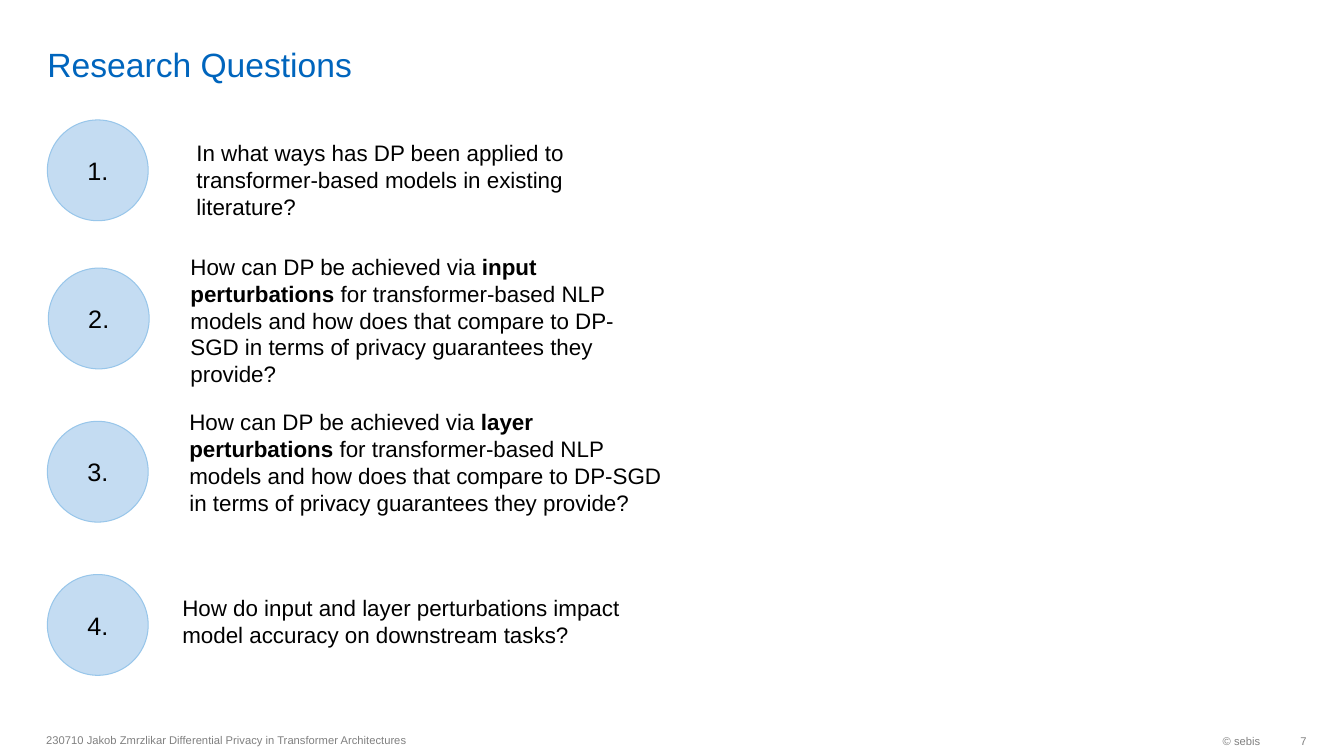
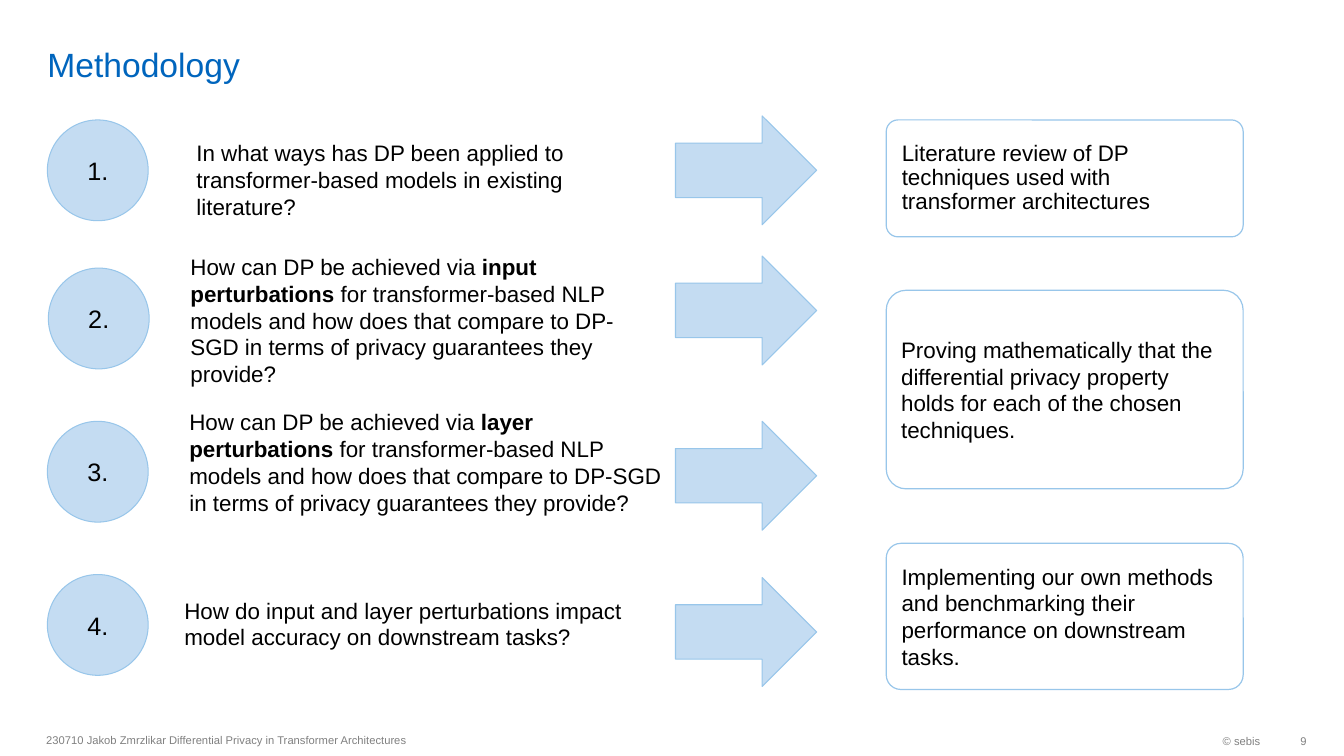
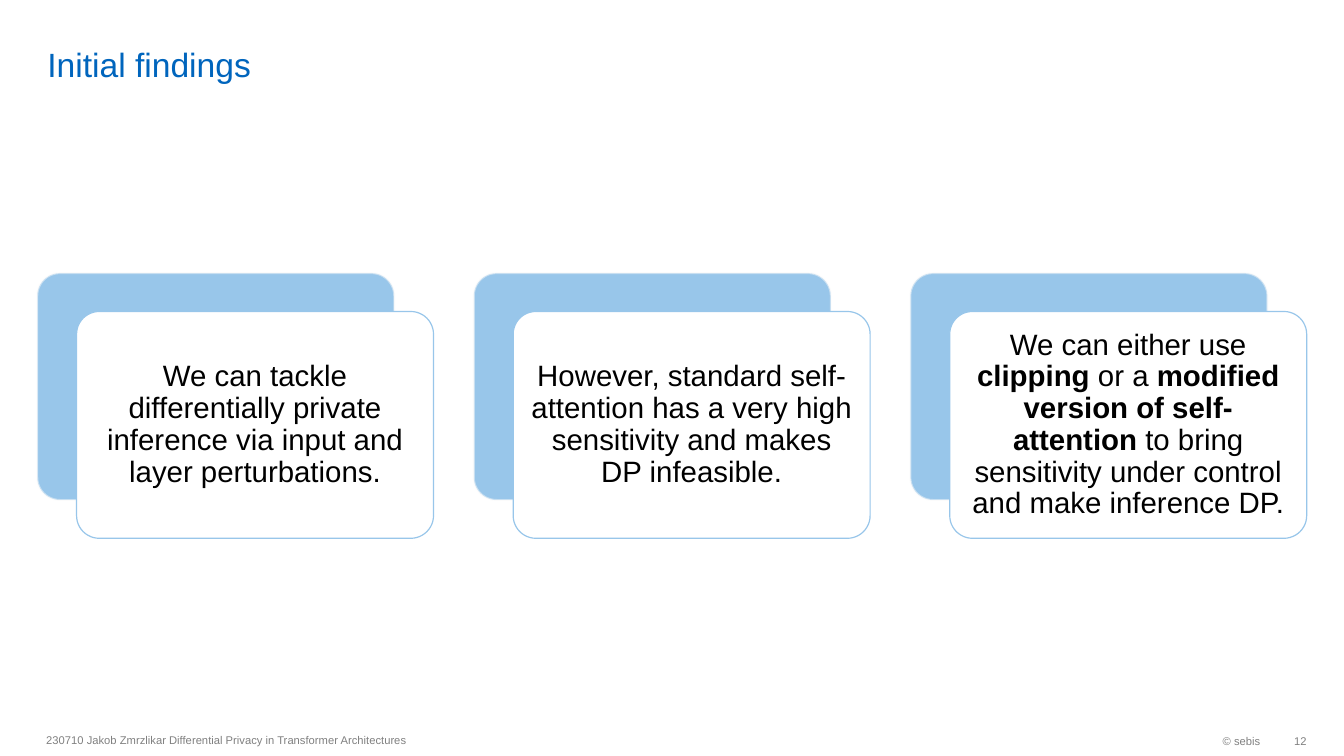
from dataclasses import dataclass, replace

from lxml import etree
from pptx import Presentation
from pptx import util as u
from pptx.dml import color
from pptx.enum import shapes, text
from pptx.oxml import ns

FONT = "Arial"
TITLE_BLUE, PALE_BLUE, SKY_BLUE = "0065BD", "C4DCF2", "98C6EA"
BLACK, WHITE, GREY, OFF_WHITE = "000000", "FFFFFF", "808080", "F9F9F9"
FOOTER = "230710 Jakob Zmrzlikar Differential Privacy in Transformer Architectures"
LEFT, CENTER, RIGHT = text.PP_ALIGN.LEFT, text.PP_ALIGN.CENTER, text.PP_ALIGN.RIGHT
TOP, MIDDLE = text.MSO_ANCHOR.TOP, text.MSO_ANCHOR.MIDDLE
Shape = shapes.MSO_SHAPE
CORNER = 0.1
CORNER_INSET = 0.29 * CORNER  # share of the height a rounded corner takes from the text


@dataclass(frozen=True)
class Box:
    left: float
    top: float
    width: float
    height: float

    def lengths(self) -> tuple:
        return tuple(u.Inches(n) for n in (self.left, self.top, self.width, self.height))


@dataclass(frozen=True)
class TextStyle:
    size: float
    color: str = BLACK
    align: text.PP_ALIGN = LEFT
    anchor: text.MSO_ANCHOR = MIDDLE
    spacing: float = 1.0
    wrap: bool = True


@dataclass(frozen=True)
class Question:
    circle: Box
    box: Box
    wording: str


@dataclass(frozen=True)
class Method:
    box: Box
    wording: str
    spacing: float = 1.0


BODY = TextStyle(16, anchor=TOP)
NUMBER = TextStyle(18, align=CENTER)
FINDING = TextStyle(21, align=CENTER, spacing=0.9)
SMALL = TextStyle(8, GREY)
SMALL_RIGHT = TextStyle(8, GREY, RIGHT, wrap=False)

PERTURBATION = (
    "How can DP be achieved via **{} perturbations** for transformer-based NLP models "
    "and how does that compare to DP-SGD in terms of privacy guarantees they provide?"
)
QUESTIONS = [
    Question(Box(0.47, 1.19, 1, 1), Box(1.85, 1.33, 4.85, 0.94),
             "In what ways has DP been applied to transformer-based models in existing literature?"),
    Question(Box(0.48, 2.66, 1, 1), Box(1.79, 2.46, 4.85, 1.41), PERTURBATION.format("input")),
    Question(Box(0.47, 4.18, 1, 1), Box(1.78, 4, 4.88, 1.45), PERTURBATION.format("layer")),
    Question(Box(0.47, 5.7, 1, 1), Box(1.71, 5.85, 4.99, 0.7),
             "How do input and layer perturbations impact model accuracy on downstream tasks?"),
]
ARROW_TOPS = [1.15, 2.54, 4.18, 5.73]
METHODS = [
    Method(Box(8.79, 1.19, 3.54, 1.16),
           "Literature review of DP techniques used with transformer architectures", 0.9),
    Method(Box(8.79, 2.88, 3.54, 1.97),
           "Proving mathematically that the differential privacy property holds "
           "for each of the chosen techniques."),
    Method(Box(8.79, 5.39, 3.54, 1.45),
           "Implementing our own methods and benchmarking their performance on downstream tasks."),
]
FINDINGS = [
    "We can tackle differentially private inference via input and layer perturbations.",
    "However, standard self-attention has a very high sensitivity and makes DP infeasible.",
    "We can either use **clipping** or a **modified version of self-attention** "
    "to bring sensitivity under control and make inference DP.",
]


def rgb(value: str) -> color.RGBColor:
    return color.RGBColor.from_string(value)


def write(shape, wording: str, style: TextStyle) -> None:
    """Fill a shape with one paragraph; words between ** are bold."""
    frame = shape.text_frame
    frame.word_wrap = style.wrap
    frame.vertical_anchor = style.anchor
    paragraph = frame.paragraphs[0]
    paragraph.alignment = style.align
    paragraph.line_spacing = style.spacing
    paragraph.font.name = FONT
    paragraph.font.size = u.Pt(style.size)
    paragraph.font.color.rgb = rgb(style.color)
    for index, part in enumerate(wording.split("**")):
        run = paragraph.add_run()
        run.text = part
        if index % 2:
            run.font.bold = True


def add_text(slide, box: Box, wording: str, style: TextStyle):
    shape = slide.shapes.add_textbox(*box.lengths())
    write(shape, wording, style)
    return shape


def add_shape(slide, kind: Shape, box: Box, fill: str = PALE_BLUE,
              line: str = SKY_BLUE, weight: float = 0.75):
    shape = slide.shapes.add_shape(kind, *box.lengths())
    shape.shadow.inherit = False
    shape.fill.solid()
    shape.fill.fore_color.rgb = rgb(fill)
    shape.line.color.rgb = rgb(line)
    shape.line.width = u.Pt(weight)
    if kind == Shape.ROUNDED_RECTANGLE:
        shape.adjustments[0] = CORNER
    return shape


def add_card(slide, box: Box, wording: str, style: TextStyle, padding: float) -> None:
    card = add_shape(slide, Shape.ROUNDED_RECTANGLE, box, WHITE, weight=0.85)
    write(card, wording, style)
    frame = card.text_frame
    margin = u.Inches(round(padding - CORNER_INSET * box.height, 2))
    frame.margin_left = frame.margin_right = margin
    frame.margin_top = frame.margin_bottom = margin


def add_slide(presentation, title: str, number: int):
    """Title-only slide with the shared title style and footer."""
    slide = presentation.slides.add_slide(presentation.slide_layouts[5])
    heading = slide.shapes.title
    heading.left, heading.top, heading.width, heading.height = Box(0.37, 0.05, 11.58, 0.79).lengths()
    write(heading, title, TextStyle(24, TITLE_BLUE, anchor=text.MSO_ANCHOR.BOTTOM))
    heading.text_frame.margin_top = heading.text_frame.margin_bottom = 0
    add_text(slide, Box(0.36, 7.18, 6.3, 0.32), FOOTER, SMALL)
    add_text(slide, Box(10.26, 7.19, 2.34, 0.32), "© sebis", SMALL_RIGHT)
    page = add_text(slide, Box(12.6, 7.19, 0.36, 0.32), str(number), SMALL_RIGHT)
    page.text_frame.margin_right = 0
    return slide


def add_questions(slide, questions: list[Question]) -> None:
    for number, question in enumerate(questions, 1):
        circle = add_shape(slide, Shape.OVAL, question.circle)
        write(circle, f"{number}.", NUMBER)
        add_text(slide, question.box, question.wording, BODY)


def build_methodology(slide) -> None:
    *first, last = QUESTIONS
    add_questions(slide, [*first, replace(last, box=Box(1.73, 5.87, 4.99, 0.79))])
    for top in ARROW_TOPS:
        add_shape(slide, Shape.RIGHT_ARROW, Box(6.7, top, 1.4, 1.08))
    for method in METHODS:
        add_card(slide, method.box, method.wording, TextStyle(16, spacing=method.spacing), 0.15)


def build_findings(slide) -> None:
    for column, wording in enumerate(FINDINGS):
        back = Box(0.37 + 4.33 * column, 2.71, 3.54, 2.25)
        panel = add_shape(slide, Shape.ROUNDED_RECTANGLE, back, SKY_BLUE, OFF_WHITE, 1.35)
        # Half-transparent outline
        outline_color = panel.line._ln.find(".//" + ns.qn("a:srgbClr"))
        etree.SubElement(outline_color, ns.qn("a:alpha")).set("val", "50000")
        front = replace(back, left=back.left + 0.39, top=back.top + 0.38)
        add_card(slide, front, wording, FINDING, 0.16)


def main() -> None:
    presentation = Presentation()
    presentation.slide_width, presentation.slide_height = u.Inches(13.33), u.Inches(7.5)
    add_questions(add_slide(presentation, "Research Questions", 7), QUESTIONS)
    build_methodology(add_slide(presentation, "Methodology", 9))
    build_findings(add_slide(presentation, "Initial findings", 12))
    presentation.save("out.pptx")


if __name__ == "__main__":
    main()
